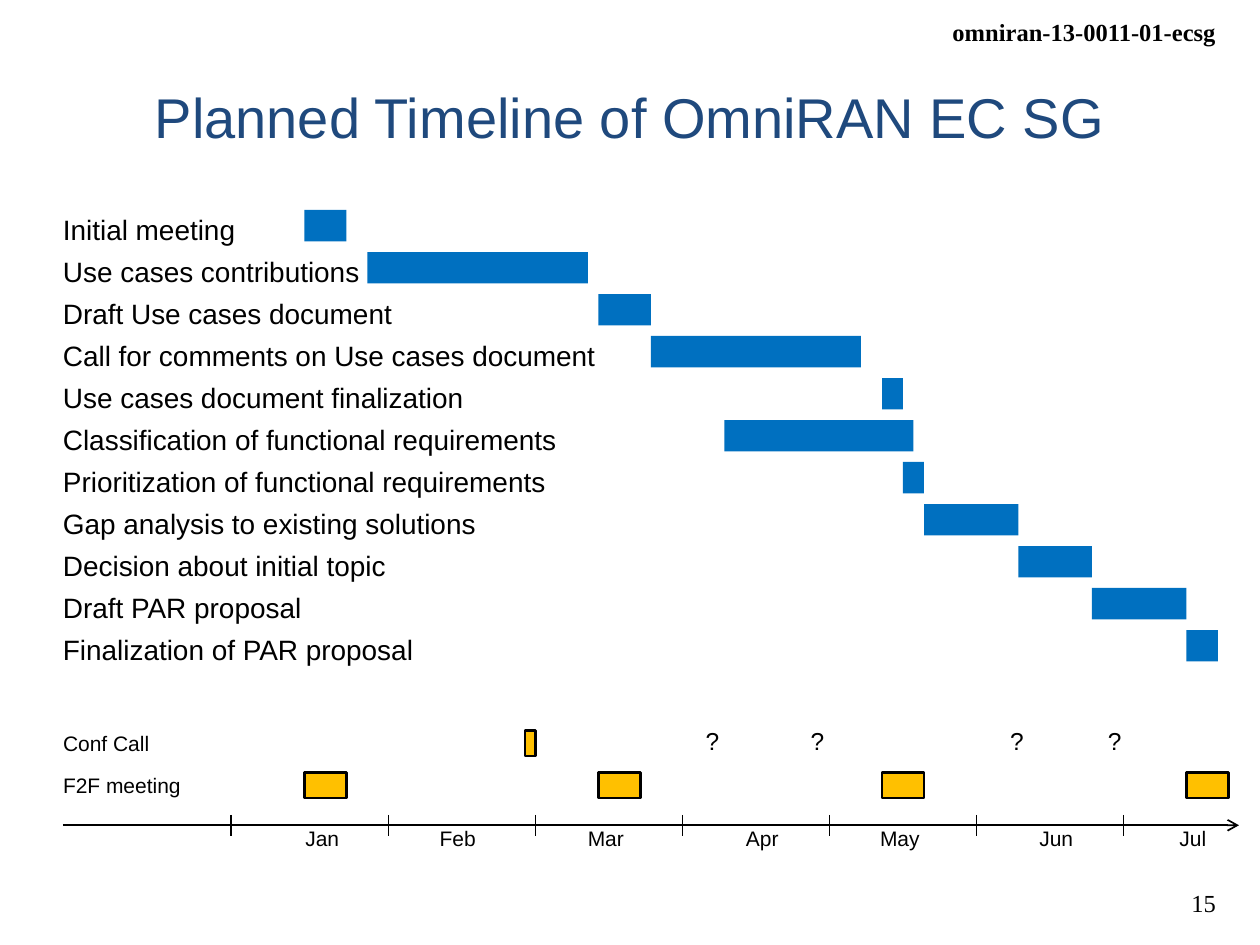
from lxml.etree import SubElement
from pptx import Presentation
from pptx.dml.color import RGBColor
from pptx.enum.shapes import MSO_CONNECTOR as Link, MSO_SHAPE as Shape
from pptx.enum.text import MSO_ANCHOR as Anchor, PP_ALIGN as Align
from pptx.oxml.ns import qn
from pptx.util import Cm, Pt

COLUMNS = 120
PAGE_WIDTH, PAGE_HEIGHT = 25.4, 19.05
ROW = 4
BLACK, NAVY, BLUE, AMBER = "000000", "1F497D", "0070C0", "FFC000"
TASKS = [
    ("Initial meeting", 29, 4),
    ("Use cases contributions", 35, 21),
    ("Draft Use cases document", 57, 5),
    ("Call for comments on Use cases document", 62, 20),
    ("Use cases document finalization", 84, 2),
    ("Classification of functional requirements", 69, 18),
    ("Prioritization of functional requirements", 86, 2),
    ("Gap analysis to existing solutions", 88, 9),
    ("Decision about initial topic", 97, 7),
    ("Draft PAR proposal", 104, 9),
    ("Finalization of PAR proposal", 113, 3),
]
CALLS = [(50, 1)]
OPEN_CALLS = [67.2, 77.2, 96.2, 105.5]
MEETINGS = [(29, 4), (57, 4), (84, 4), (113, 4)]
TICKS = [22, *range(37, 108, 14)]
MONTHS = {"Jan": 30.7, "Feb": 43.6, "Mar": 57.7, "Apr": 72.6,
          "May": 85.7, "Jun": 100.6, "Jul": 113.6}


def grid(*units):
    """Turn grid units, 120 to the page width, into lengths."""
    return [Cm(unit * PAGE_WIDTH / COLUMNS) for unit in units]


def color(value):
    """Turn a hex string into a colour."""
    return RGBColor.from_string(value)


def write(frame, text, align=Align.LEFT, ink=BLACK, **font):
    """Put one formatted line of text into a frame."""
    para = frame.paragraphs[0]
    para.alignment = align
    span = para.add_run()
    span.text = text
    for name, value in {"name": "Arial", "size": Pt(12), "bold": False, **font}.items():
        setattr(span.font, name, value)
    span.font.color.rgb = color(ink)


def add_label(page, box, text, align=Align.LEFT, **font):
    """Add a text box without margins."""
    frame = page.shapes.add_textbox(*grid(*box)).text_frame
    frame.word_wrap = True
    for side in ("left", "top", "right", "bottom"):
        setattr(frame, f"margin_{side}", 0)
    write(frame, text, align, **font)


def add_bar(page, box, fill, outline=None):
    """Add a filled bar, outlined if a colour is given."""
    bar = page.shapes.add_shape(Shape.RECTANGLE, *grid(*box))
    bar.shadow.inherit = False
    bar.fill.solid()
    bar.fill.fore_color.rgb = color(fill)
    if outline:
        bar.line.color.rgb = color(outline)
        bar.line.width = Pt(1.5)
    else:
        bar.line.fill.background()


def add_line(page, ends, arrow=False):
    """Add a thin black line, with an arrowhead at its end if asked."""
    link = page.shapes.add_connector(Link.STRAIGHT, *grid(*ends))
    link.line.color.rgb = color(BLACK)
    link.line.width = Pt(1)
    if arrow:
        SubElement(link.line._get_or_add_ln(), qn("a:tailEnd"), type="arrow")
    SubElement(link._element.spPr, qn("a:effectLst"))


def add_title(page, box, text):
    """Place and fill the title placeholder."""
    title = page.shapes.title
    for name, value in zip(("left", "top", "width", "height"), grid(*box)):
        setattr(title, name, value)
    title.text_frame.vertical_anchor = Anchor.MIDDLE
    write(title.text_frame, text, Align.CENTER, NAVY, size=Pt(32))


def add_margin_texts(page, box):
    """Add the document number above and the page number below."""
    left, top, width, height = box
    style = {"align": Align.RIGHT, "name": "Times New Roman", "size": Pt(14)}
    add_label(page, (left, top, width, 3), "omniran-13-0011-01-ecsg", bold=True, **style)
    add_label(page, (left, top + height - 3, width, 3), "15", **style)


def add_tasks(page, box):
    """Add one label and one bar for each task."""
    left, top, width, _ = box
    for row, (name, start, length) in enumerate(TASKS):
        y = top + row * ROW
        add_label(page, (left, y + 0.2, width, 3.2), name, size=Pt(16))
        add_bar(page, (start, y, length, 3), BLUE)


def add_meetings(page, box):
    """Add the rows of conference calls and face-to-face meetings."""
    left, top, width, height = box
    for row, (name, events) in enumerate([("Conf Call", CALLS), ("F2F meeting", MEETINGS)]):
        y = top + row * ROW
        add_label(page, (left, y, width, height), name)
        for start, length in events:
            add_bar(page, (start, y, length, height), AMBER, BLACK)
    for start in OPEN_CALLS:
        add_label(page, (start, top - 0.5, 3, 3), "?", size=Pt(14))


def add_axis(page, box):
    """Add the time arrow with its ticks and month names."""
    left, top, width, height = box
    add_line(page, (left, top, left + width, top), arrow=True)
    for tick in TICKS:
        add_line(page, (tick, top - 1, tick, top + 1))
    for month, middle in MONTHS.items():
        add_label(page, (middle - 4, top, 8, height), month, Align.CENTER)


def main():
    """Build and save the timeline slide."""
    deck = Presentation()
    deck.slide_width, deck.slide_height = Cm(PAGE_WIDTH), Cm(PAGE_HEIGHT)
    page = deck.slides.add_slide(deck.slide_layouts[5])
    add_margin_texts(page, (76, 1.6, 39.8, 86))
    add_title(page, (6, 3.6, 108, 15), "Planned Timeline of OmniRAN EC SG")
    add_tasks(page, (6, 20, 54, 44))
    add_meetings(page, (6, 69.6, 16, 2.4))
    add_axis(page, (6, 78.6, 112, 2.4))
    deck.save("out.pptx")


if __name__ == "__main__":
    main()
